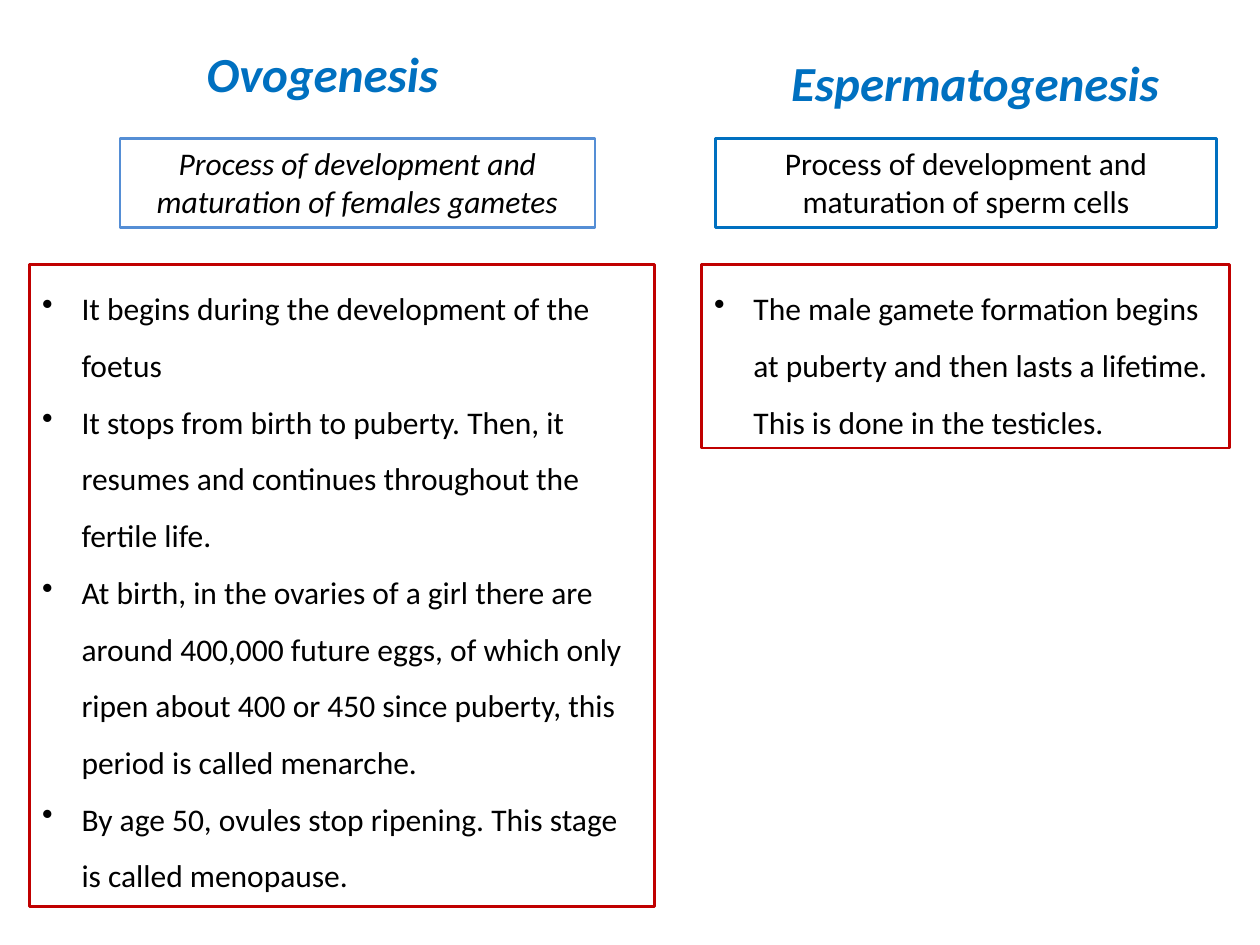
from dataclasses import dataclass

import lxml.etree
import pptx
import pptx.dml.color
import pptx.enum.shapes
import pptx.enum.text
import pptx.oxml.ns
import pptx.util

Pt = pptx.util.Pt
ALIGN = pptx.enum.text.PP_ALIGN

COLORS = {
    "title": "0070C0",
    "text": "000000",
    "female": "558ED5",
    "male": "0070C0",
    "detail": "C00000",
}
FONT = "Calibri"
BULLET_INDENT = 22.5
TITLE_HEIGHT = 52.5
DEFINITION_TOP, DEFINITION_HEIGHT = 79, 51
DETAIL_TOP = 151


@dataclass
class Box:
    left: float
    top: float
    width: float
    height: float


@dataclass
class Column:
    title: str
    title_box: Box
    definition: str
    definition_box: Box
    definition_line: str
    definition_italic: bool
    details: list[str]
    detail_box: Box


COLUMNS = [
    Column(
        title="Ovogenesis",
        title_box=Box(111, 4.5, 170, TITLE_HEIGHT),
        definition="Process of development and maturation of females gametes",
        definition_box=Box(68.5, DEFINITION_TOP, 271.5, DEFINITION_HEIGHT),
        definition_line="female",
        definition_italic=True,
        details=[
            "It begins during the development of the foetus",
            "It stops from birth to puberty. Then, it resumes and continues "
            "throughout the fertile life.",
            "At birth, in the ovaries of a girl there are around 400,000 future "
            "eggs, of which only ripen about 400 or 450 since puberty, this "
            "period is called menarche.",
            "By age 50, ovules stop ripening. This stage is called menopause.",
        ],
        detail_box=Box(17, DETAIL_TOP, 357, 367),
    ),
    Column(
        title="Espermatogenesis",
        title_box=Box(445, 9.5, 238, TITLE_HEIGHT),
        definition="Process of development and maturation of sperm cells",
        definition_box=Box(409, DEFINITION_TOP, 286, DEFINITION_HEIGHT),
        definition_line="male",
        definition_italic=False,
        details=[
            "The male gamete formation begins at puberty and then lasts a "
            "lifetime. This is done in the testicles.",
        ],
        detail_box=Box(401, DETAIL_TOP, 301.5, 105),
    ),
]


def rgb(name: str) -> pptx.dml.color.RGBColor:
    return pptx.dml.color.RGBColor.from_string(COLORS[name])


def add_bullet(p) -> None:
    """Give the paragraph a bullet with a hanging indent."""
    ppr = p._p.get_or_add_pPr()
    ppr.set("marL", str(Pt(BULLET_INDENT)))
    ppr.set("indent", str(-Pt(BULLET_INDENT)))
    bullet = lxml.etree.SubElement(ppr, pptx.oxml.ns.qn("a:buChar"))
    bullet.set("char", "•")


def write_text(sp, *paragraphs: str, size: float = 18, color: str = "text",
               bold: bool = False, italic: bool = False, align=ALIGN.LEFT,
               spacing: float = 1.0, bullets: bool = False) -> None:
    tf = sp.text_frame
    tf.word_wrap = True
    tf.vertical_anchor = pptx.enum.text.MSO_ANCHOR.TOP
    for i, text in enumerate(paragraphs):
        p = tf.add_paragraph() if i else tf.paragraphs[0]
        p.alignment = align
        p.line_spacing = spacing
        if bullets:
            add_bullet(p)
        r = p.add_run()
        r.text = text
        r.font.name = FONT
        r.font.size = Pt(size)
        r.font.bold = bold
        r.font.italic = italic
        r.font.color.rgb = rgb(color)


def lengths(box: Box) -> tuple:
    return Pt(box.left), Pt(box.top), Pt(box.width), Pt(box.height)


def add_frame(s, box: Box, line: str):
    """Add an unfilled rectangle with a coloured outline."""
    sp = s.shapes.add_shape(pptx.enum.shapes.MSO_SHAPE.RECTANGLE, *lengths(box))
    sp.shadow.inherit = False
    sp.fill.background()
    sp.line.color.rgb = rgb(line)
    sp.line.width = Pt(1.5)
    return sp


def draw_column(s, col: Column) -> None:
    write_text(add_frame(s, col.detail_box, "detail"), *col.details,
               spacing=1.5, bullets=True)
    write_text(s.shapes.add_textbox(*lengths(col.title_box)), col.title,
               size=28, color="title", bold=True, italic=True, spacing=1.5)
    write_text(add_frame(s, col.definition_box, col.definition_line),
               col.definition, italic=col.definition_italic, align=ALIGN.CENTER)


def main() -> None:
    prs = pptx.Presentation()
    prs.slide_width, prs.slide_height = Pt(720), Pt(540)
    s = prs.slides.add_slide(prs.slide_layouts[6])
    for col in COLUMNS:
        draw_column(s, col)
    prs.save("out.pptx")


if __name__ == "__main__":
    main()
